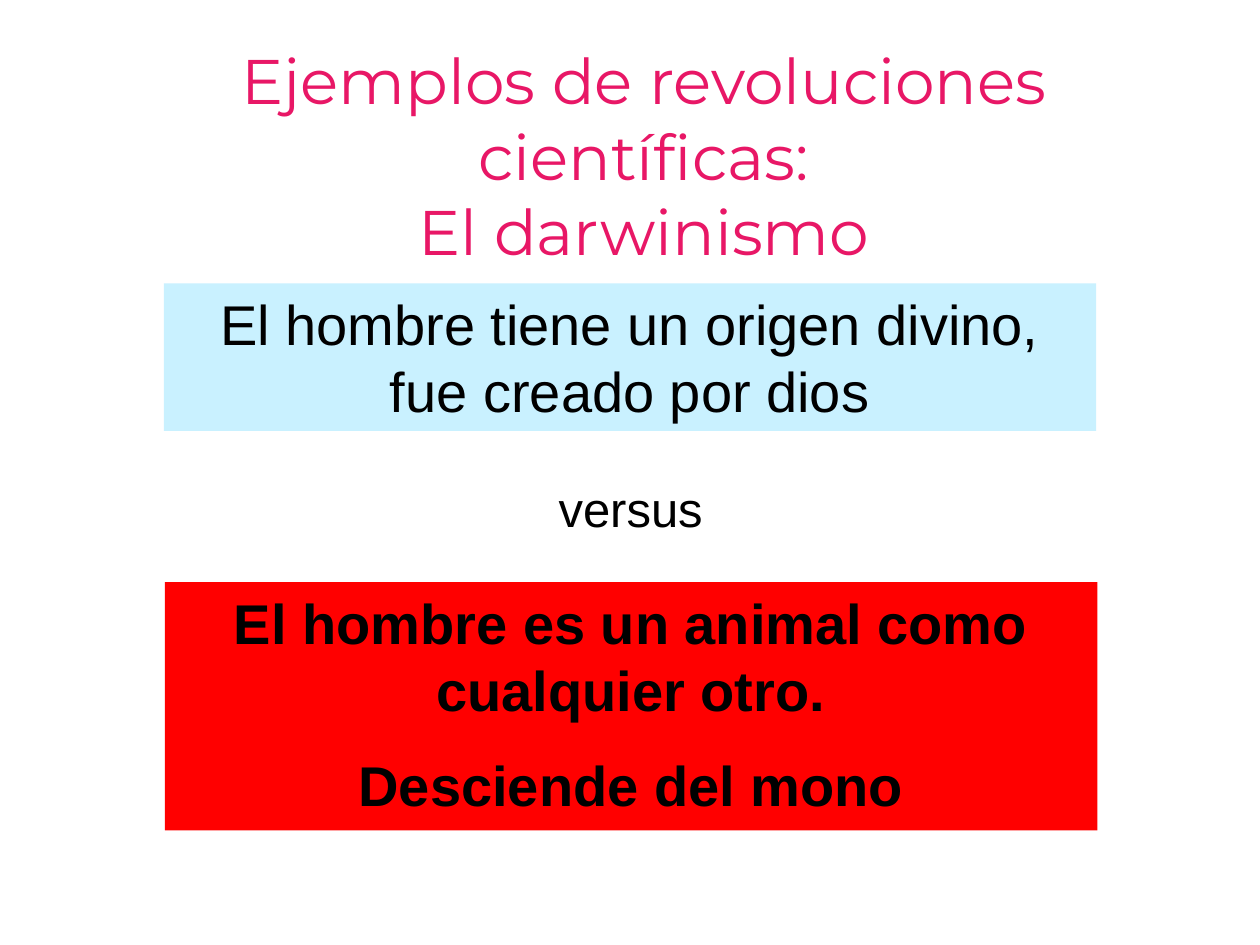
"""Build the slide that sets the divine origin of man against Darwinism."""
from dataclasses import dataclass

from pptx import Presentation
from pptx.dml.color import RGBColor
from pptx.enum.shapes import MSO_SHAPE
from pptx.enum.text import MSO_ANCHOR, MSO_AUTO_SIZE, PP_ALIGN
from pptx.util import Inches, Pt


@dataclass(frozen=True)
class Theme:
    head: RGBColor = RGBColor(0xE8, 0x17, 0x66)
    ink: RGBColor = RGBColor(0, 0, 0)
    sky: RGBColor = RGBColor(0xC9, 0xF1, 0xFF)
    red: RGBColor = RGBColor(0xFF, 0, 0)
    head_font: str = "Montserrat"
    body_font: str = "Arial"
    head_size: int = 36
    claim_size: int = 32
    link_size: int = 28


theme = Theme()


def write(shape, lines, font, size, color, bold=False, gap=0, wrap=True):
    frame = shape.text_frame
    frame.word_wrap = wrap
    frame.auto_size = MSO_AUTO_SIZE.NONE
    frame.vertical_anchor = MSO_ANCHOR.TOP
    for row, line in enumerate(lines):
        para = frame.add_paragraph() if row else frame.paragraphs[0]
        para.alignment = PP_ALIGN.CENTER
        para.space_before = Pt(gap if row else 0)
        run = para.add_run()
        run.text = line
        run.font.name = font
        run.font.size = Pt(size)
        run.font.bold = bold
        run.font.color.rgb = color


deck = Presentation()
deck.slide_width, deck.slide_height = Inches(10), Inches(7.5)
slide = deck.slides.add_slide(deck.slide_layouts[5])

title = slide.shapes.title
title.left, title.top = Inches(0.45), Inches(0.28)
title.width, title.height = Inches(9.32), Inches(1.67)
write(title, ["Ejemplos de revoluciones científicas:", "El darwinismo"],
      theme.head_font, theme.head_size, theme.head, wrap=False)

claims = [
    (1.3, 2.25, 1.17, theme.sky, False,
     ["El hombre tiene un origen divino, fue creado por dios"]),
    (1.31, 4.62, 1.97, theme.red, True,
     ["El hombre es un animal como cualquier otro.", "Desciende del mono"]),
]
for left, top, height, fill, bold, lines in claims:
    box = slide.shapes.add_shape(MSO_SHAPE.RECTANGLE, Inches(left), Inches(top),
                                 Inches(7.4), Inches(height))
    box.shadow.inherit = False
    box.fill.solid()
    box.fill.fore_color.rgb = fill
    box.line.fill.background()
    write(box, lines, theme.body_font, theme.claim_size, theme.ink, bold,
          gap=theme.claim_size / 2)

link = slide.shapes.add_textbox(Inches(4.33), Inches(3.75), Inches(1.35), Inches(0.57))
write(link, ["versus"], theme.body_font, theme.link_size, theme.ink, wrap=False)

deck.save("out.pptx")
